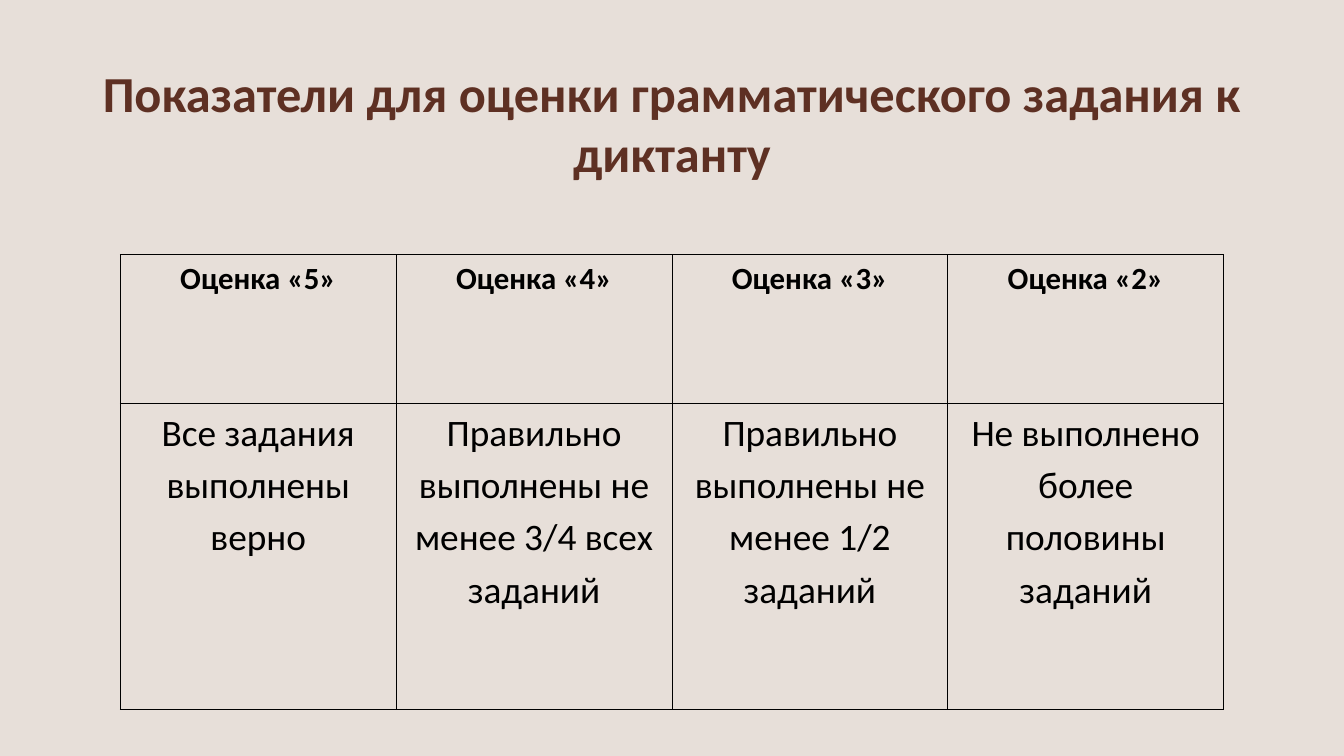
from lxml import etree
from pptx import Presentation
from pptx.dml.color import RGBColor
from pptx.enum.text import MSO_ANCHOR, MSO_AUTO_SIZE, PP_ALIGN
from pptx.oxml.ns import qn
from pptx.util import Inches, Pt

CENTER = PP_ALIGN.CENTER
MIDDLE, TOP = MSO_ANCHOR.MIDDLE, MSO_ANCHOR.TOP
NO_FIT = MSO_AUTO_SIZE.NONE
TITLE_ONLY = 5

TITLE = "Показатели для оценки грамматического задания к диктанту"
GRADES = {
    "Оценка «5»": "Все задания выполнены верно",
    "Оценка «4»": "Правильно выполнены не менее 3/4 всех заданий",
    "Оценка «3»": "Правильно выполнены не менее 1/2 заданий",
    "Оценка «2»": "Не выполнено более половины заданий",
}


def color(code):
    return RGBColor.from_string(code)


def assign(target, values):
    for name, value in values.items():
        setattr(target, name, value)


class Deck:
    font = "Calibri"
    paper, brown, black = "E7DFD9", "5E3023", "000000"
    head = {"size": Pt(33), "bold": True}
    body = {"size": Pt(40), "bold": False}
    inset = {"margin_left": Inches(0.11), "margin_right": Inches(0.11),
             "margin_top": 0, "margin_bottom": 0, "vertical_anchor": TOP}

    def __init__(self, width, height):
        self.prs = Presentation()
        assign(self.prs, {"slide_width": Inches(width),
                          "slide_height": Inches(height)})
        self.slide = self.prs.slides.add_slide(
            self.prs.slide_layouts[TITLE_ONLY])
        fill = self.slide.background.fill
        fill.solid()
        fill.fore_color.rgb = color(self.paper)

    def label(self, frame, text, style, ink, space=1.0):
        frame.text = text
        para = frame.paragraphs[0]
        assign(para, {"alignment": CENTER, "line_spacing": space})
        font = para.runs[0].font
        assign(font, {"name": self.font, **style})
        font.color.rgb = color(ink)

    def title(self, text, left, top, width, height):
        shape = self.slide.shapes.title
        assign(shape, {"left": Inches(left), "top": Inches(top),
                       "width": Inches(width), "height": Inches(height)})
        frame = shape.text_frame
        self.label(frame, text, {"size": Pt(54), "bold": True}, self.brown)
        assign(frame, {"word_wrap": True, "auto_size": NO_FIT,
                       "vertical_anchor": MIDDLE})

    def border(self, cell):
        props = cell._tc.get_or_add_tcPr()
        for side in ("lnL", "lnR", "lnT", "lnB"):
            line = etree.SubElement(props, qn(f"a:{side}"), w=str(Pt(1)))
            fill = etree.SubElement(line, qn("a:solidFill"))
            etree.SubElement(fill, qn("a:srgbClr"), val=self.black)

    def table(self, rows, left, top, width, heights):
        count = len(rows[0])
        table = self.slide.shapes.add_table(
            len(rows), count, Inches(left), Inches(top),
            Inches(width), Inches(sum(heights))).table
        assign(table, {"first_row": False, "horz_banding": False})
        for r, (texts, height) in enumerate(zip(rows, heights)):
            table.rows[r].height = Inches(height)
            style = self.body if r else self.head
            for c, text in enumerate(texts):
                cell = table.cell(r, c)
                assign(cell, self.inset)
                self.label(cell.text_frame, text, style, self.black, 1.15)
                self.border(cell)
                cell.fill.background()


def main():
    deck = Deck(20, 11.25)
    deck.title(TITLE, 1, 0.88, 18, 1.88)
    rows = [list(GRADES), list(GRADES.values())]
    deck.table(rows, 1.79, 3.79, 16.42, (2.22, 4.55))
    deck.prs.save("out.pptx")


if __name__ == "__main__":
    main()
